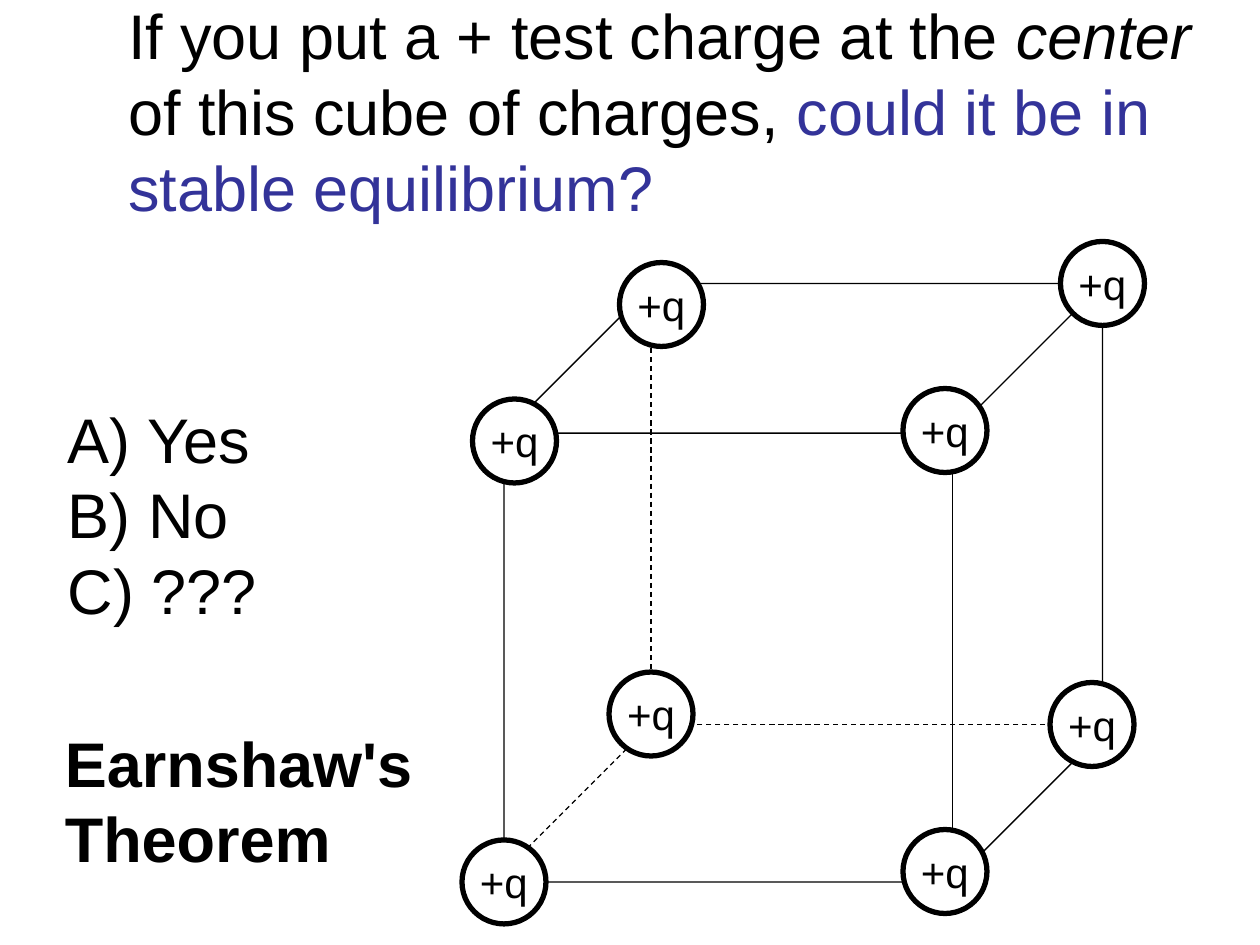
"""Build a slide asking about a test charge inside a cube of charges."""
from dataclasses import dataclass
from lxml.etree import SubElement
from pptx import Presentation
from pptx.dml.color import RGBColor as RGB
from pptx.enum.dml import MSO_LINE_DASH_STYLE as Dash
from pptx.enum.shapes import MSO_CONNECTOR as Link, MSO_SHAPE as Kind
from pptx.enum.text import MSO_ANCHOR as Anchor, MSO_AUTO_SIZE as Fit, PP_ALIGN as Align
from pptx.oxml.ns import qn
from pptx.util import Pt


@dataclass(frozen=True)
class Theme:
    face: str = "Arial"
    ink: RGB = RGB(0, 0, 0)
    accent: RGB = RGB(0x33, 0x33, 0x99)
    paper: RGB = RGB(255, 255, 255)
    large: Pt = Pt(36)
    small: Pt = Pt(24)
    thin: Pt = Pt(0.75)
    thick: Pt = Pt(3)


theme = Theme()


def style(par, size, align=Align.LEFT, bold=False):
    par.font.name, par.font.size, par.font.bold = theme.face, size, bold
    par.font.color.rgb = theme.ink
    par.alignment = align
    par.space_before = Pt(0)


def place(shape, *box):
    shape.left, shape.top, shape.width, shape.height = map(Pt, box)


deck = Presentation()
deck.slide_width, deck.slide_height = Pt(720), Pt(540)
slide = deck.slides.add_slide(deck.slide_layouts[1])
shapes = slide.shapes

title = shapes.title
place(title, 66, 12, 630, 102)
frame = title.text_frame
frame.auto_size, frame.vertical_anchor = Fit.NONE, Anchor.MIDDLE
par = frame.paragraphs[0]
style(par, theme.large)
par.add_run().text = "If you put a + test charge at the "
word = par.add_run()
word.text, word.font.italic = "center ", True
par.add_run().text = "of this cube of charges, "
query = par.add_run()
query.text = "could it be in stable equilibrium?"
query.font.color.rgb = theme.accent

body = slide.placeholders[1]
place(body, 31.5, 225, 150, 137)
frame = body.text_frame
frame.text = " Yes\n No\n ???"
frame.auto_size, frame.word_wrap = Fit.NONE, True
for par in frame.paragraphs:
    style(par, theme.large)
    props = par._p.get_or_add_pPr()
    props.set("marL", str(Pt(36)))
    props.set("indent", str(-Pt(36)))
    SubElement(props, qn("a:buFont")).set("typeface", theme.face)
    SubElement(props, qn("a:buAutoNum")).set("type", "alphaUcParenR")

edges = [(294, 492, 372, 414), (618, 414, 384, 414), (372, 168, 372, 402)]
for edge in edges:
    line = shapes.add_connector(Link.STRAIGHT, *map(Pt, edge))
    line.line.color.rgb, line.line.width = theme.ink, theme.thin
    line.line.dash_style = Dash.DASH
    SubElement(line._element.spPr, qn("a:effectLst"))

cube = shapes.add_shape(Kind.CUBE, Pt(288), Pt(162), Pt(342), Pt(342))
cube.adjustments[0] = 0.25
cube.shadow.inherit = False
cube.fill.background()
cube.line.color.rgb, cube.line.width = theme.ink, theme.thin

spots = [(270, 228), (600, 390), (606, 138), (354, 150),
         (516, 222), (516, 474), (348, 384), (264, 480)]
for left, top in spots:
    charge = shapes.add_shape(Kind.OVAL, Pt(left), Pt(top), Pt(48), Pt(48))
    charge.shadow.inherit = False
    charge.fill.solid()
    charge.fill.fore_color.rgb = theme.paper
    charge.line.color.rgb, charge.line.width = theme.ink, theme.thick
    frame = charge.text_frame
    frame.text = "+q"
    frame.word_wrap, frame.vertical_anchor = False, Anchor.MIDDLE
    style(frame.paragraphs[0], theme.small, Align.CENTER)

label = shapes.add_textbox(Pt(30), Pt(410.4), Pt(216), Pt(93.6))
frame = label.text_frame
frame.text = "Earnshaw's Theorem"
frame.word_wrap = True
style(frame.paragraphs[0], theme.large, bold=True)

deck.save("out.pptx")
